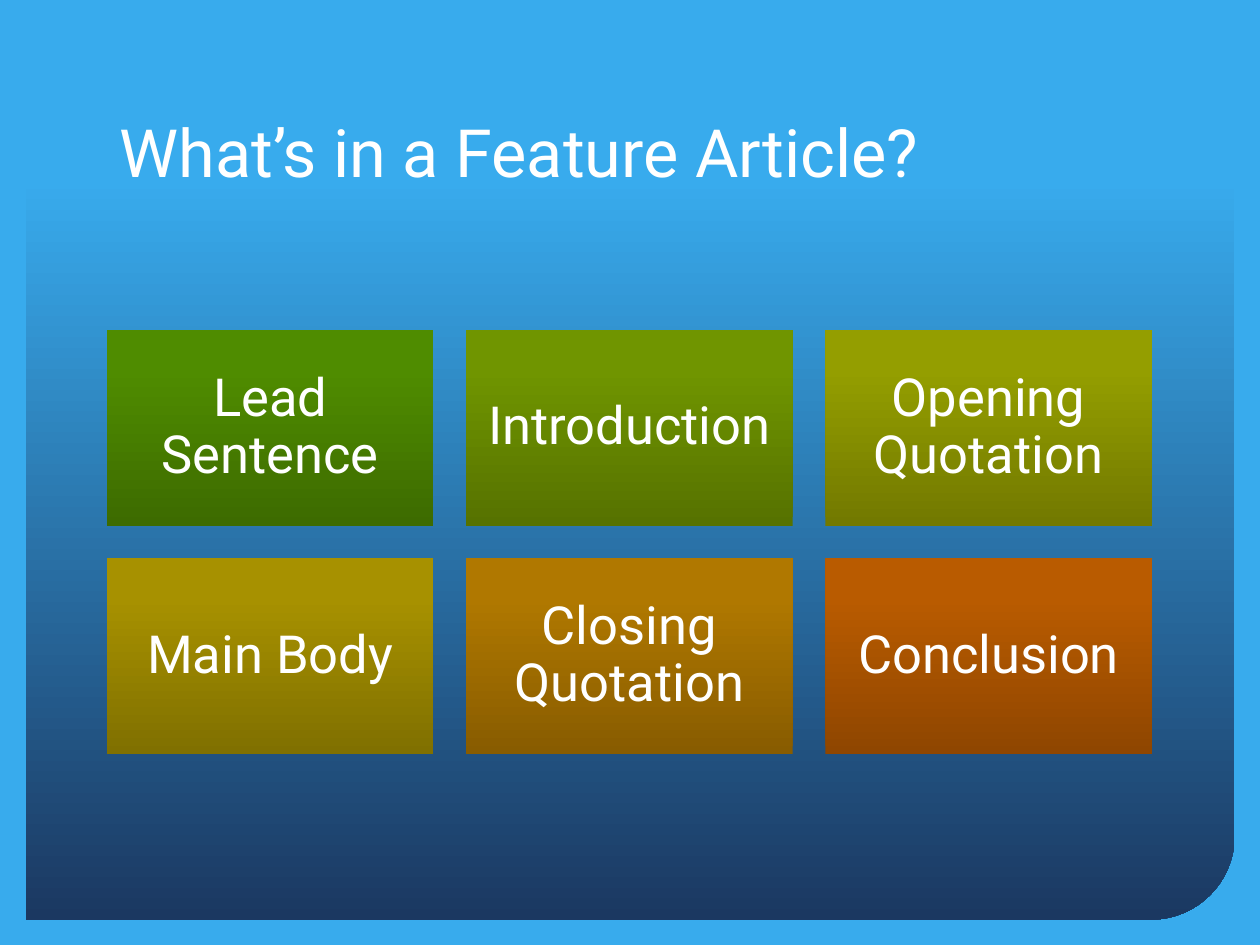
import pptx
import pptx.dml.color
import pptx.enum.shapes
import pptx.enum.text
import pptx.util

Cm = pptx.util.Cm
Pt = pptx.util.Pt
MSO_SHAPE = pptx.enum.shapes.MSO_SHAPE
PP_ALIGN = pptx.enum.text.PP_ALIGN
MSO_ANCHOR = pptx.enum.text.MSO_ANCHOR


def color(value):
    return pptx.dml.color.RGBColor.from_string(value)


def add_gradient_shape(kind, left, top, width, height, angle, stops):
    shape = slide.shapes.add_shape(kind, Cm(left), Cm(top), Cm(width), Cm(height))
    shape.shadow.inherit = False
    shape.line.fill.background()
    shape.fill.gradient()
    shape.fill.gradient_angle = angle
    for stop, (position, value) in zip(shape.fill.gradient_stops, stops):
        stop.position = position
        stop.color.rgb = color(value)
    return shape


presentation = pptx.Presentation()
presentation.slide_width = Cm(25.4)
presentation.slide_height = Cm(19.05)
slide = presentation.slides.add_slide(presentation.slide_layouts[6])
slide.background.fill.solid()
slide.background.fill.fore_color.rgb = color("38ABED")

panel = add_gradient_shape(
    MSO_SHAPE.ROUND_2_DIAG_RECTANGLE, 0.53, 0.53, 24.36, 18.01, 270,
    [(0.17, "38ABED"), (1, "1B3861")],
)
panel.adjustments[0] = 0.094
panel.adjustments[1] = 0

title = slide.shapes.add_textbox(Cm(2.16), Cm(1.07), Cm(21.06), Cm(2.9))
title.text_frame.word_wrap = True
title.text_frame.vertical_anchor = MSO_ANCHOR.BOTTOM
paragraph = title.text_frame.paragraphs[0]
paragraph.text = "What’s in a Feature Article?"
paragraph.font.name = "Roboto"
paragraph.font.size = Pt(38)
paragraph.font.color.rgb = color("FFFFFF")

article_parts = [
    ("Lead Sentence", "3D6B00", "4F8C00"),
    ("Introduction", "567200", "709500"),
    ("Opening Quotation", "727900", "949E00"),
    ("Main Body", "807000", "A79100"),
    ("Closing Quotation", "885C00", "B07800"),
    ("Conclusion", "8F4600", "B95B00"),
]
for index, (text, dark, light) in enumerate(article_parts):
    row, column = divmod(index, 3)
    card = add_gradient_shape(
        MSO_SHAPE.RECTANGLE, 2.16 + column * 7.24, 6.65 + row * 4.6, 6.58, 3.95, 90,
        [(0, dark), (0.8, light)],
    )
    frame = card.text_frame
    frame.word_wrap = True
    frame.vertical_anchor = MSO_ANCHOR.MIDDLE
    frame.margin_left = frame.margin_right = Cm(0.3)
    frame.margin_top = frame.margin_bottom = Cm(0.3)
    paragraph = frame.paragraphs[0]
    paragraph.text = text
    paragraph.alignment = PP_ALIGN.CENTER
    paragraph.line_spacing = 0.9
    paragraph.font.name = "Roboto"
    paragraph.font.size = Pt(30)
    paragraph.font.color.rgb = color("FFFFFF")

presentation.save("out.pptx")
